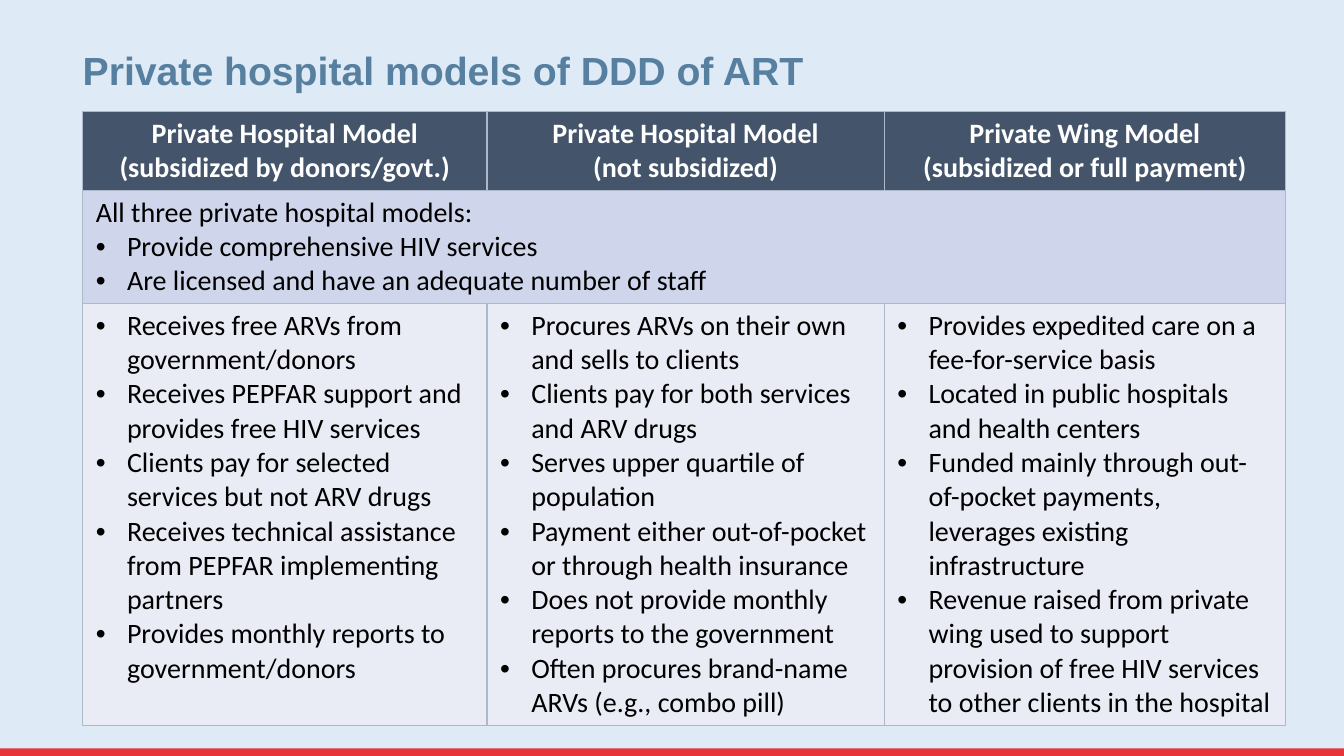
from lxml import etree
from pptx import Presentation, util as u
from pptx.dml.color import RGBColor
from pptx.enum import shapes, text
from pptx.oxml import ns

WIDE, HIGH = 13.33, 7.5
COLS = [4.01, 3.94, 3.98]
ROWS = [0.77, 1.1, 4.16]
LEFT, TOP = 0.82, 1.11
BODY = {"name": "Calibri", "size": u.Pt(20), "bold": False}
HEAD = {**BODY, "bold": True}
TITLE = {"name": "Arial", "size": u.Pt(28), "bold": True}
INSET = {"margin_left": u.Inches(0.13), "margin_right": u.Inches(0.13),
         "margin_top": u.Inches(0.05), "margin_bottom": u.Inches(0.05)}

HEADS = [
    ["Private Hospital Model", "(subsidized by donors/govt.)"],
    ["Private Hospital Model", "(not subsidized)"],
    ["Private Wing Model", "(subsidized or full payment)"],
]
SHARED = [
    "All three private hospital models:",
    "Provide comprehensive HIV services",
    "Are licensed and have an adequate number of staff",
]
MODELS = [
    ["Receives free ARVs from government/donors",
     "Receives PEPFAR support and provides free HIV services",
     "Clients pay for selected services but not ARV drugs",
     "Receives technical assistance from PEPFAR implementing partners",
     "Provides monthly reports to government/donors"],
    ["Procures ARVs on their own and sells to clients",
     "Clients pay for both services and ARV drugs",
     "Serves upper quartile of population",
     "Payment either out-of-pocket or through health insurance",
     "Does not provide monthly reports to the government",
     "Often procures brand-name ARVs (e.g., combo pill)"],
    ["Provides expedited care on a fee-for-service basis",
     "Located in public hospitals and health centers",
     "Funded mainly through out-of-pocket payments, leverages existing "
     "infrastructure",
     "Revenue raised from private wing used to support provision of free "
     "HIV services to other clients in the hospital"],
]


def paint(fill, color):
    fill.solid()
    fill.fore_color.rgb = RGBColor.from_string(color)


def style(item, look):
    for key, value in look.items():
        setattr(item, key, value)


def write(para, words, look, color):
    run = para.add_run()
    run.text = words
    style(run.font, look)
    run.font.color.rgb = RGBColor.from_string(color)


def bullet(para):
    props = para._p.get_or_add_pPr()
    props.set("marL", str(u.Inches(0.31)))
    props.set("indent", str(-u.Inches(0.31)))
    etree.SubElement(props, ns.qn("a:buFont")).set("typeface", "Arial")
    etree.SubElement(props, ns.qn("a:buChar")).set("char", "•")


def border(cell, color):
    # Border elements come before the fill
    props = cell._tc.get_or_add_tcPr()
    for place, side in enumerate(("lnL", "lnR", "lnT", "lnB")):
        line = etree.Element(ns.qn("a:" + side), w=str(u.Pt(1)))
        solid = etree.SubElement(line, ns.qn("a:solidFill"))
        etree.SubElement(solid, ns.qn("a:srgbClr"), val=color)
        props.insert(place, line)


def fill_cell(cell, lines, look, color, first=None, align=None):
    """Write lines, with bullets from index first onward."""
    for i, words in enumerate(lines):
        frame = cell.text_frame
        para = frame.add_paragraph() if i else frame.paragraphs[0]
        if first is not None and i >= first:
            bullet(para)
        para.alignment = align
        write(para, words, look, color)


def add_title(slide, words):
    title = slide.shapes.title
    style(title, {"left": u.Inches(0.72), "top": u.Inches(0.42),
                  "width": u.Inches(11.5), "height": u.Inches(0.56)})
    frame = title.text_frame
    style(frame, {"vertical_anchor": text.MSO_ANCHOR.BOTTOM,
                  "word_wrap": True, "auto_size": text.MSO_AUTO_SIZE.NONE})
    para = frame.paragraphs[0]
    style(para, {"alignment": text.PP_ALIGN.LEFT, "line_spacing": 0.9})
    write(para, words, TITLE, "577F9F")


def add_band(slide):
    high = HIGH * 0.01
    band = slide.shapes.add_shape(
        shapes.MSO_SHAPE.RECTANGLE, 0, u.Inches(HIGH - high),
        u.Inches(WIDE), u.Inches(high))
    band.shadow.inherit = False
    paint(band.fill, "E73439")
    band.line.fill.background()


def add_grid(slide):
    table = slide.shapes.add_table(
        len(ROWS), len(COLS), u.Inches(LEFT), u.Inches(TOP),
        u.Inches(sum(COLS)), u.Inches(sum(ROWS))).table
    for col, size in zip(table.columns, COLS):
        col.width = u.Inches(size)
    for row, size, color in zip(table.rows, ROWS,
                                ("44546A", "CFD5EA", "E9EBF5")):
        row.height = u.Inches(size)
        for cell in row.cells:
            style(cell, INSET)
            paint(cell.fill, color)
            border(cell, "ADB9CA")
    return table


def main():
    deck = Presentation()
    deck.slide_width, deck.slide_height = u.Inches(WIDE), u.Inches(HIGH)
    slide = deck.slides.add_slide(deck.slide_layouts[5])

    # Backdrop and title
    paint(slide.background.fill, "DEEBF7")
    add_band(slide)
    add_title(slide, "Private hospital models of DDD of ART")

    # Comparison of the three models
    table = add_grid(slide)
    table.cell(1, 0).merge(table.cell(1, len(COLS) - 1))
    fill_cell(table.cell(1, 0), SHARED, BODY, "000000", first=1)
    for i, (head, model) in enumerate(zip(HEADS, MODELS)):
        fill_cell(table.cell(0, i), head, HEAD, "FFFFFF",
                  align=text.PP_ALIGN.CENTER)
        fill_cell(table.cell(2, i), model, BODY, "000000", first=0)

    deck.save("out.pptx")


if __name__ == "__main__":
    main()
